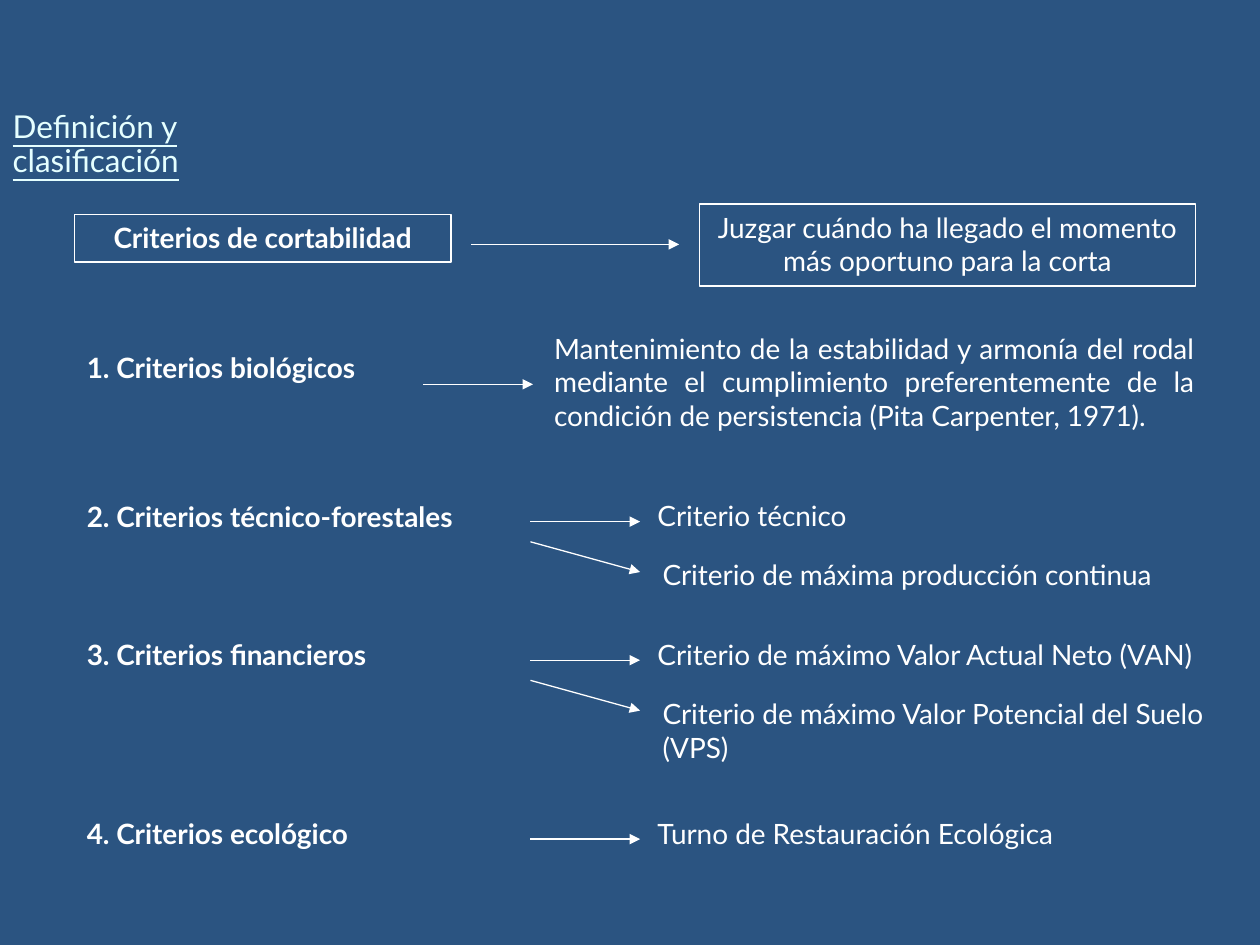
from lxml.etree import SubElement
from pptx import Presentation
from pptx.dml.color import RGBColor
from pptx.enum.shapes import MSO_CONNECTOR, MSO_SHAPE
from pptx.enum.text import MSO_ANCHOR, MSO_AUTO_SIZE, PP_ALIGN
from pptx.oxml.ns import qn
from pptx.util import Inches, Pt

NAVY = RGBColor(0x2B, 0x54, 0x81)
WHITE = RGBColor(0xFF, 0xFF, 0xFF)
PALE_CYAN = RGBColor(0xE5, 0xFF, 0xFF)

# Content
HEADING = "Definición y clasificación"
CONCEPT = "Criterios de cortabilidad"
DEFINITION = "Juzgar cuándo ha llegado el momento más oportuno para la corta"
BIOLOGICAL = "1. Criterios biológicos"
BIOLOGICAL_AIM = (
    "Mantenimiento de la estabilidad y armonía del rodal mediante el "
    "cumplimiento preferentemente de la condición de persistencia "
    "(Pita Carpenter, 1971)."
)
# (top, criterion, options)
CRITERIA = [
    (3.91, "2. Criterios técnico-forestales",
     ["Criterio técnico", "Criterio de máxima producción continua"]),
    (5.01, "3. Criterios financieros",
     ["Criterio de máximo Valor Actual Neto (VAN)",
      "Criterio de máximo Valor Potencial del Suelo (VPS)"]),
    (6.43, "4. Criterios ecológico", ["Turno de Restauración Ecológica"]),
]

# Layout and formats
LEFT, LABEL_WIDTH, LINE_HEIGHT = 0.59, 3.58, 0.37
ARROW_START, ARROW_END = 4.21, 5.08
# Per option: left, width, drop below the row top, arrow start and end drops
OPTION_SLOTS = [(5.12, 4.53, 0, 0.23, 0.23), (5.16, 4.72, 0.47, 0.39, 0.63)]
BODY = {"name": "Lato", "size": Pt(16), "bold": False}
LABEL = {**BODY, "bold": True}
TITLE = {**BODY, "size": Pt(18), "underline": True}


def write(shape, text, font_format, align=PP_ALIGN.LEFT, color=WHITE,
          anchor=MSO_ANCHOR.TOP):
    frame = shape.text_frame
    frame.text = text
    frame.word_wrap = True
    frame.auto_size = MSO_AUTO_SIZE.NONE
    frame.vertical_anchor = anchor
    paragraph = frame.paragraphs[0]
    paragraph.alignment = align
    for name, value in font_format.items():
        setattr(paragraph.font, name, value)
    paragraph.font.color.rgb = color
    return paragraph


def add_text(slide, box, text, font_format, **options):
    shape = slide.shapes.add_textbox(*map(Inches, box))
    write(shape, text, font_format, **options)


def add_frame(slide, box, text, font_format):
    shape = slide.shapes.add_shape(MSO_SHAPE.RECTANGLE, *map(Inches, box))
    shape.shadow.inherit = False
    shape.fill.background()
    shape.line.color.rgb = WHITE
    shape.line.width = Pt(0.75)
    write(shape, text, font_format, align=PP_ALIGN.CENTER)


def add_arrow(slide, *ends):
    arrow = slide.shapes.add_connector(MSO_CONNECTOR.STRAIGHT, *map(Inches, ends))
    arrow.line.color.rgb = WHITE
    arrow.line.width = Pt(0.75)
    SubElement(arrow.line._get_or_add_ln(), qn("a:tailEnd"), type="triangle")
    SubElement(arrow._element.spPr, qn("a:effectLst"))


def add_label(slide, top, text):
    add_text(slide, (LEFT, top, LABEL_WIDTH, LINE_HEIGHT), text, LABEL,
             anchor=MSO_ANCHOR.MIDDLE)


def main():
    prs = Presentation()
    prs.slide_width, prs.slide_height = Inches(10), Inches(7.5)
    slide = prs.slides.add_slide(prs.slide_layouts[5])
    slide.background.fill.solid()
    slide.background.fill.fore_color.rgb = NAVY

    # Title
    title = slide.shapes.title
    title.left, title.top, title.width, title.height = map(
        Inches, (0, 0.83, 2.4, 0.64))
    write(title, HEADING, TITLE, color=PALE_CYAN).line_spacing = 0.9

    # Concept and its definition
    add_frame(slide, (LEFT, 1.7, 2.99, 0.38), CONCEPT, LABEL)
    add_arrow(slide, 3.74, 1.94, 5.39, 1.94)
    add_frame(slide, (5.55, 1.62, 3.94, 0.65), DEFINITION, BODY)

    # Biological criteria
    add_label(slide, 2.73, BIOLOGICAL)
    add_arrow(slide, 3.36, 3.05, 4.23, 3.05)
    add_text(slide, (4.3, 2.58, 5.28, 0.9), BIOLOGICAL_AIM, BODY,
             align=PP_ALIGN.JUSTIFY)

    # Criteria that branch into options
    for top, criterion, options in CRITERIA:
        add_label(slide, top, criterion)
        for option, (left, width, drop, start, end) in zip(options, OPTION_SLOTS):
            add_arrow(slide, ARROW_START, top + start, ARROW_END, top + end)
            add_text(slide, (left, top + drop, width, LINE_HEIGHT), option, BODY)

    prs.save("out.pptx")


if __name__ == "__main__":
    main()
